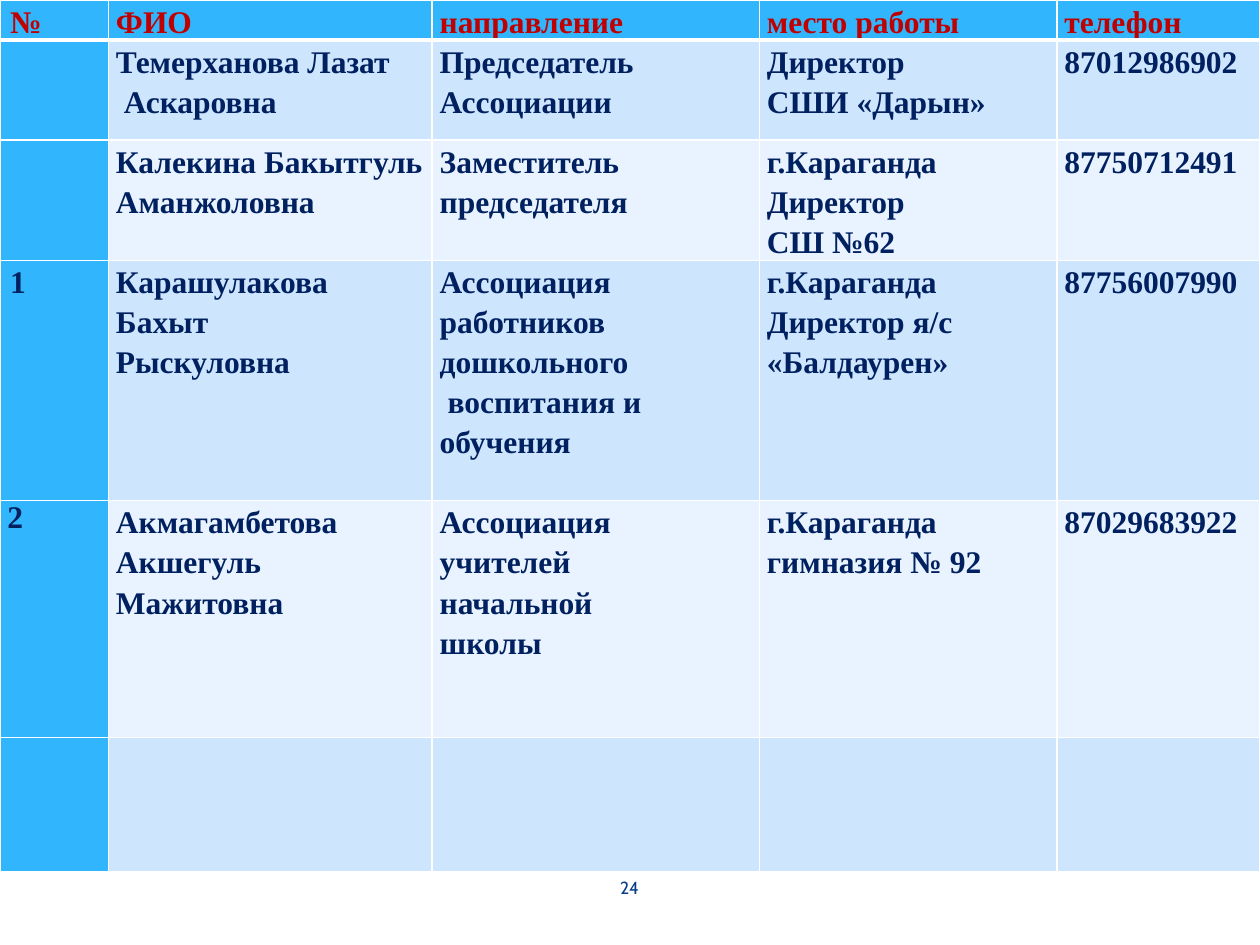
from dataclasses import dataclass

from lxml import etree
from pptx import Presentation
from pptx.dml.color import RGBColor
from pptx.enum.text import MSO_ANCHOR, PP_ALIGN
from pptx.oxml.ns import qn
from pptx.util import Pt

CENTER = PP_ALIGN.CENTER
MIDDLE = MSO_ANCHOR.MIDDLE


@dataclass(frozen=True)
class Theme:
    header_fill: str = "31B6FD"
    bands: tuple = ("CEE5FE", "E8F3FF")
    border: str = "FFFFFF"
    header_text: str = "C00000"
    body_text: str = "002060"
    number_text: str = "073E87"
    table_font: str = "Times New Roman"
    number_font: str = "Cabin"
    table_size: int = 18
    number_size: int = 10


THEME = Theme()

# An exact line height keeps each row as tall as its lines need.
LINE_HEIGHT = 22.9
COLUMN_WIDTHS = (62, 185, 187, 170, 116)
ROW_HEIGHTS = (LINE_HEIGHT, 57.1, 3 * LINE_HEIGHT, 137.3, 135.5, 76.5)
CELL_MARGINS = {
    "margin_left": Pt(4.3),
    "margin_right": Pt(4.3),
    "margin_top": 0,
    "margin_bottom": 0,
}
NUMBER_INDENT = Pt(1.5)

# Each line of a cell is a paragraph.
CONTACTS = (
    ("№", "ФИО", "направление", "место работы", "телефон"),
    ("", "Темерханова Лазат\n Аскаровна", "Председатель\nАссоциации",
     "Директор\nСШИ «Дарын»", "87012986902"),
    ("", "Калекина Бакытгуль Аманжоловна", "Заместитель\nпредседателя",
     "г.Караганда\nДиректор\nСШ №62", "87750712491"),
    ("1", "Карашулакова Бахыт\nРыскуловна",
     "Ассоциация\nработников\nдошкольного\n воспитания и\nобучения",
     "г.Караганда\nДиректор я/с «Балдаурен»", "87756007990"),
    ("2", "Акмагамбетова Акшегуль Мажитовна",
     "Ассоциация\nучителей\nначальной\nшколы",
     "г.Караганда\nгимназия № 92", "87029683922"),
    ("", "", "", "", ""),
)


def set_attrs(obj, values):
    for name, value in values.items():
        setattr(obj, name, value)


def add_run(p, text, font, size, color, bold=False):
    r = p.add_run()
    r.text = text
    set_attrs(r.font, {"name": font, "size": Pt(size), "bold": bold})
    r.font.color.rgb = RGBColor.from_string(color)


def set_borders(cell, widths):
    """Draw cell borders; widths maps L, R, T and B to points."""
    tc_pr = cell._tc.get_or_add_tcPr()
    for side, width in widths.items():
        ln = etree.SubElement(tc_pr, qn(f"a:ln{side}"), w=str(Pt(width)))
        fill = etree.SubElement(ln, qn("a:solidFill"))
        etree.SubElement(fill, qn("a:srgbClr"), val=THEME.border)


def format_cell(cell, row, col):
    set_attrs(cell, CELL_MARGINS)
    set_borders(cell, {
        "L": 1,
        "R": 1,
        "T": 3 if row == 1 else 1,
        "B": 3 if row == 0 else 1,
    })
    is_header = row == 0 or col == 0
    color = THEME.header_fill if is_header else THEME.bands[(row - 1) % 2]
    cell.fill.solid()
    cell.fill.fore_color.rgb = RGBColor.from_string(color)


def fill_cell(cell, text, row, col):
    tf = cell.text_frame
    color = THEME.header_text if row == 0 else THEME.body_text
    for i, line in enumerate(text.split("\n")):
        p = tf.paragraphs[0] if i == 0 else tf.add_paragraph()
        if text != "2":
            p.line_spacing = Pt(LINE_HEIGHT)
            if col == 0:
                p._p.get_or_add_pPr().set("indent", str(NUMBER_INDENT))
        add_run(p, line, THEME.table_font, THEME.table_size, color, True)


def add_contacts_table(slide):
    table = slide.shapes.add_table(
        len(ROW_HEIGHTS), len(COLUMN_WIDTHS), 0, 0,
        Pt(sum(COLUMN_WIDTHS)), Pt(sum(ROW_HEIGHTS))).table
    for column, width in zip(table.columns, COLUMN_WIDTHS):
        column.width = Pt(width)
    for table_row, height in zip(table.rows, ROW_HEIGHTS):
        table_row.height = Pt(height)
    for row, texts in enumerate(CONTACTS):
        for col, text in enumerate(texts):
            cell = table.cell(row, col)
            format_cell(cell, row, col)
            if text:
                fill_cell(cell, text, row, col)


def add_page_number(slide, number):
    box = slide.shapes.add_textbox(Pt(314), Pt(492.5), Pt(91.5), Pt(29))
    tf = box.text_frame
    set_attrs(tf, {"word_wrap": True, "vertical_anchor": MIDDLE})
    p = tf.paragraphs[0]
    p.alignment = CENTER
    add_run(p, number, THEME.number_font, THEME.number_size, THEME.number_text)


def main():
    prs = Presentation()
    set_attrs(prs, {"slide_width": Pt(720), "slide_height": Pt(540)})
    slide = prs.slides.add_slide(prs.slide_layouts[6])
    add_contacts_table(slide)
    add_page_number(slide, "24")
    prs.save("out.pptx")


if __name__ == "__main__":
    main()
